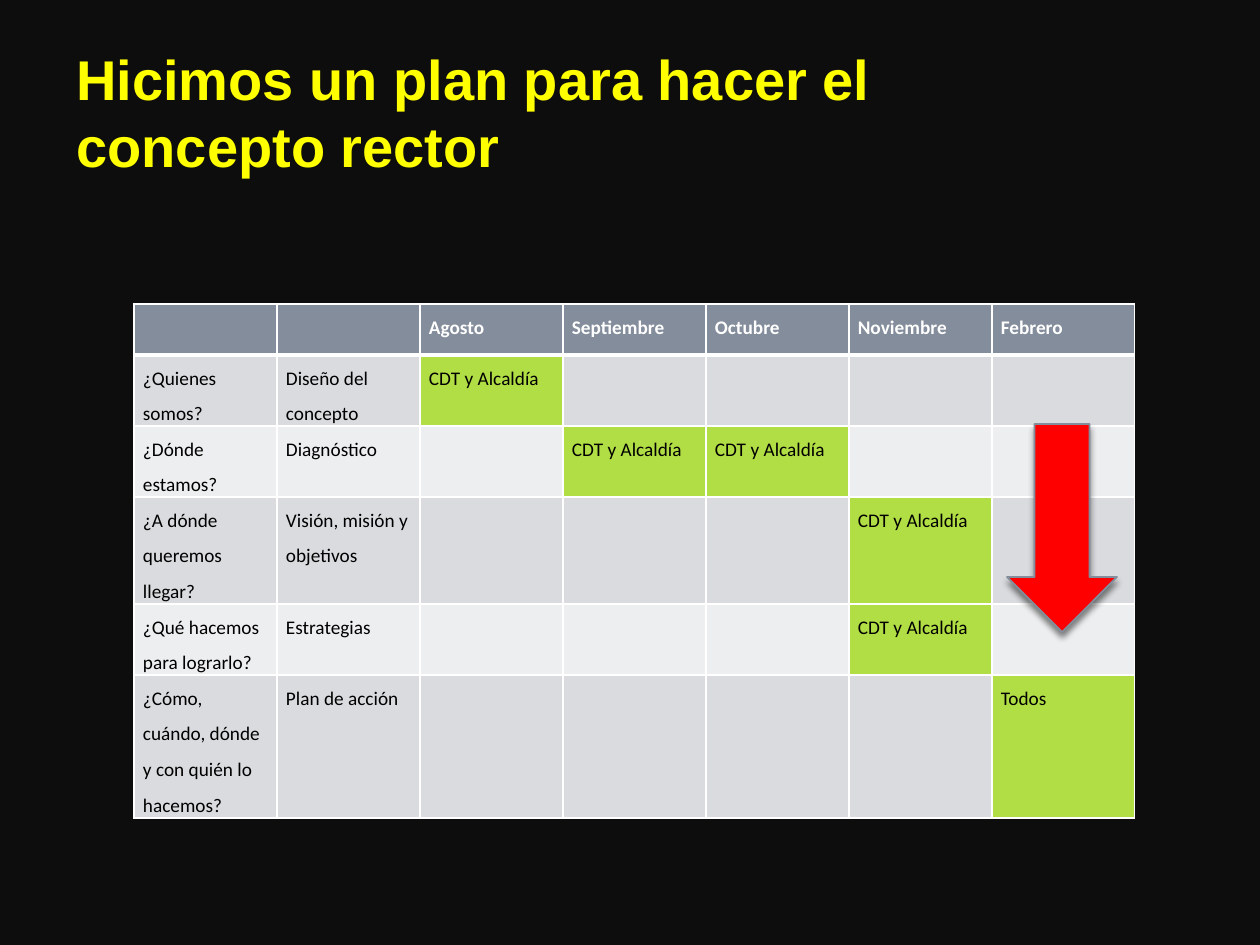
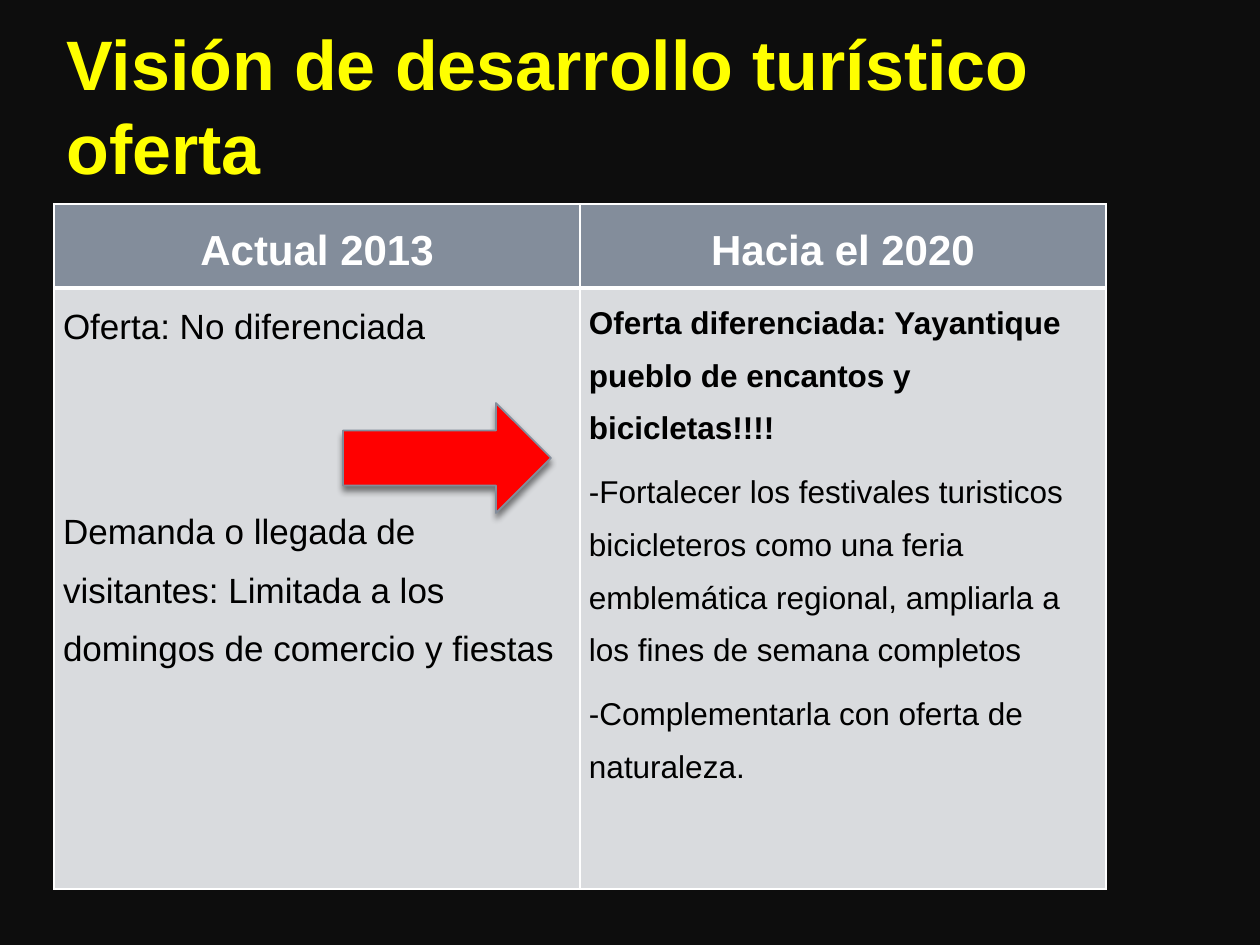
from lxml.etree import SubElement
from pptx import Presentation
from pptx.dml.color import RGBColor
from pptx.enum.shapes import MSO_SHAPE
from pptx.enum.text import MSO_ANCHOR, PP_ALIGN
from pptx.oxml.ns import qn
from pptx.util import Emu, Pt

PX = 914400 / 126
COLORS = {
    "background": "0D0D0D", "title": "FFFF00", "header": "838D9B",
    "band": "D9DBDE", "light_band": "EDEEEF", "assigned": "B1DE45",
    "arrow": "FF0000", "white": "FFFFFF", "black": "000000",
}
TEAM = "CDT y Alcaldía"
PLAN = [
    ["", "", "Agosto", "Septiembre", "Octubre", "Noviembre", "Febrero"],
    ["¿Quienes somos?", "Diseño del concepto", TEAM, "", "", "", ""],
    ["¿Dónde estamos?", "Diagnóstico", "", TEAM, TEAM, "", ""],
    ["¿A dónde queremos llegar?", "Visión, misión y objetivos", "", "", "", TEAM, ""],
    ["¿Qué hacemos para lograrlo?", "Estrategias", "", "", "", TEAM, ""],
    ["¿Cómo, cuándo, dónde y con quién lo hacemos?", "Plan de acción",
     "", "", "", "", "Todos"],
]
PLAN_HEIGHTS = [51, 71, 71, 107, 71, 143]
CURRENT_OFFER = [
    "Oferta: No diferenciada",
    "Demanda o llegada de visitantes: Limitada a los domingos de comercio y fiestas",
]
FUTURE_OFFER = [
    "Oferta diferenciada: Yayantique pueblo de encantos y bicicletas!!!!",
    "-Fortalecer los festivales turisticos bicicleteros como una feria "
    "emblemática regional, ampliarla a los fines de semana completos",
    "-Complementarla con oferta de naturaleza.",
]


def px(length):
    """Turn a length in px into EMU."""
    return Emu(round(length * PX))


def color(name):
    """Look up a named colour."""
    return RGBColor.from_string(COLORS[name])


class SlideBuilder:
    """Hold the shared style and the slide being built."""

    def __init__(self, deck):
        """Start with a deck and no slide."""
        self.deck = deck
        self.slide = None

    def new_slide(self):
        """Add a blank dark slide."""
        self.slide = self.deck.slides.add_slide(self.deck.slide_layouts[6])
        fill = self.slide.background.fill
        fill.solid()
        fill.fore_color.rgb = color("background")

    def style(self, para, size, name, bold=False, font="Arial"):
        """Format every run of a paragraph."""
        for span in para.runs:
            span.font.size = Pt(size)
            span.font.name = font
            span.font.bold = bold
            span.font.color.rgb = color(name)

    def title(self, text, left, top, width, height, size):
        """Add a bottom-anchored title."""
        box = self.slide.shapes.add_textbox(px(left), px(top), px(width), px(height))
        frame = box.text_frame
        frame.word_wrap = True
        frame.vertical_anchor = MSO_ANCHOR.BOTTOM
        frame.text = text
        self.style(frame.paragraphs[0], size, "title", bold=True)

    def table(self, left, top, column_width, heights, column_count):
        """Add an empty table with equal columns."""
        frame = self.slide.shapes.add_table(
            len(heights), column_count, px(left), px(top),
            px(column_width * column_count), px(sum(heights)))
        grid = frame.table
        grid.horz_banding = False
        for column in grid.columns:
            column.width = px(column_width)
        for row, height in zip(grid.rows, heights):
            row.height = px(height)
        return grid

    def borders(self, cell, row):
        """Draw white cell borders, thick under the header row."""
        thick_side = {0: "lnB", 1: "lnT"}.get(row)
        properties = cell._tc.get_or_add_tcPr()
        for side in ("lnL", "lnR", "lnT", "lnB"):
            width = Pt(3) if side == thick_side else Pt(1)
            line = SubElement(properties, qn(f"a:{side}"), w=str(width))
            fill = SubElement(line, qn("a:solidFill"))
            SubElement(fill, qn("a:srgbClr"), val=COLORS["white"])

    def cell(self, grid, row, column, lines, fill, size, font="Arial", after=0):
        """Fill one cell with text, colour and borders."""
        cell = grid.cell(row, column)
        cell.margin_left = cell.margin_right = px(9)
        cell.margin_top = cell.margin_bottom = 0
        self.borders(cell, row)
        cell.fill.solid()
        cell.fill.fore_color.rgb = color(fill)
        cell.text_frame.text = "\n".join(lines)
        for para in cell.text_frame.paragraphs:
            para.line_spacing = 1.5
            para.space_after = Pt(after)
            self.style(para, size, "black" if row else "white", row == 0, font)
        return cell.text_frame.paragraphs

    def arrow(self, left, top, rotation=0):
        """Add a red block arrow with a soft shadow."""
        shape = self.slide.shapes.add_shape(
            MSO_SHAPE.RIGHT_ARROW, px(left), px(top), px(208), px(110))
        shape.rotation = rotation
        shape.fill.solid()
        shape.fill.fore_color.rgb = color("arrow")
        shape.line.color.rgb = color("header")
        shape.line.width = Pt(1)
        shape.shadow.inherit = False
        effects = shape._element.spPr.find(qn("a:effectLst"))
        shadow = SubElement(effects, qn("a:outerShdw"), blurRad=str(Pt(3.8)),
                            dist=str(Pt(3)), dir="5400000", rotWithShape="0")
        tint = SubElement(shadow, qn("a:srgbClr"), val=COLORS["black"])
        SubElement(tint, qn("a:alpha"), val="48000")


def build_plan(builder):
    """Build the planning calendar slide."""
    builder.new_slide()
    builder.title("Hicimos un plan para hacer el concepto rector", 64, 26, 1022, 159, 32)
    grid = builder.table(134, 304, 143, PLAN_HEIGHTS, len(PLAN[0]))
    for row, texts in enumerate(PLAN):
        for column, text in enumerate(texts):
            if row == 0:
                fill = "header"
            elif column > 1 and text:
                fill = "assigned"
            else:
                fill = "band" if row % 2 else "light_band"
            builder.cell(grid, row, column, [text], fill, 11, "Calibri")
    builder.arrow(958, 473, rotation=90)


def build_vision(builder):
    """Build the slide comparing the present and future offer."""
    builder.new_slide()
    builder.title("Visión de desarrollo turístico oferta", 54, 0, 1008, 195, 40)
    grid = builder.table(54, 204, 526, [84, 601], 2)
    for column, heading in enumerate(["Actual 2013", "Hacia el 2020"]):
        paras = builder.cell(grid, 0, column, [heading], "header", 24, after=6)
        paras[0].alignment = PP_ALIGN.CENTER
    current = builder.cell(grid, 1, 0, CURRENT_OFFER, "band", 20, after=6)
    current[1].space_before = Pt(78)
    future = builder.cell(grid, 1, 1, FUTURE_OFFER, "band", 18, after=6)
    builder.style(future[0], 18, "black", bold=True)
    builder.arrow(343, 403)


def main():
    """Build and save the deck."""
    deck = Presentation()
    deck.slide_width, deck.slide_height = px(1260), px(945)
    builder = SlideBuilder(deck)
    build_plan(builder)
    build_vision(builder)
    deck.save("out.pptx")


if __name__ == "__main__":
    main()
